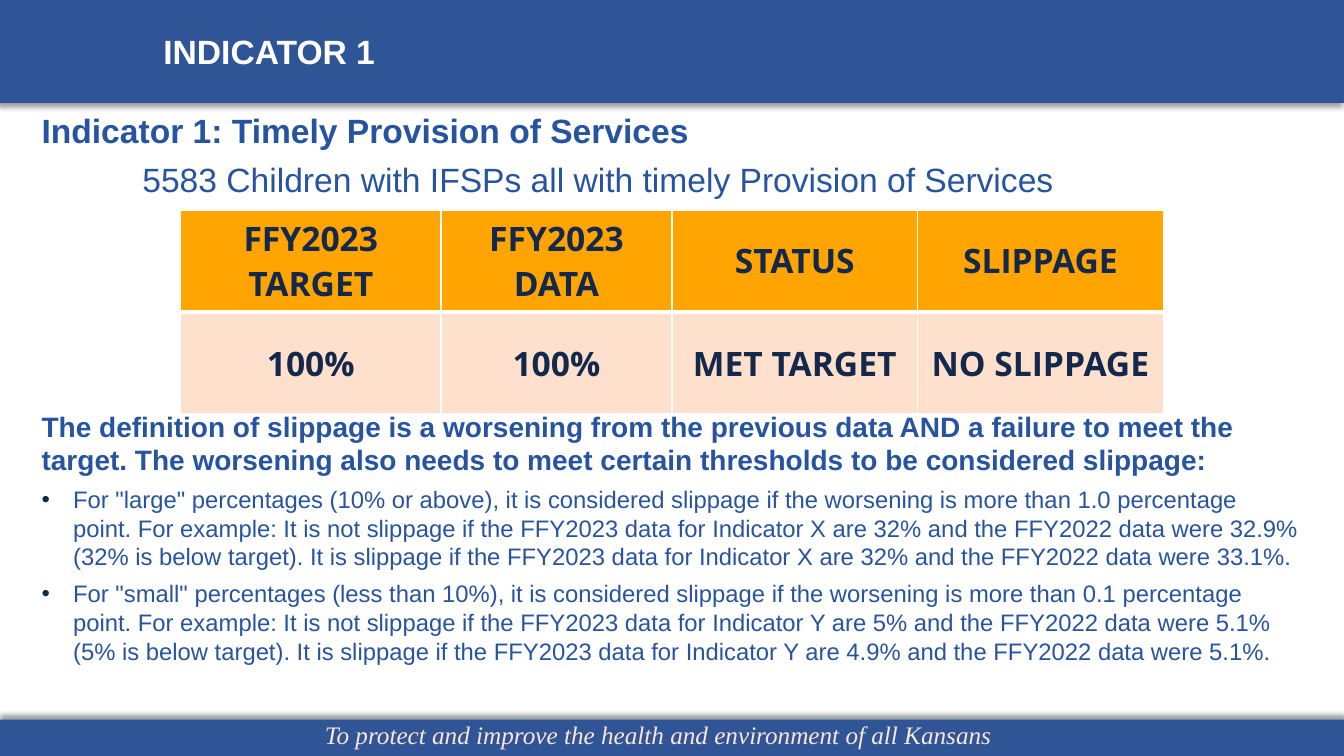
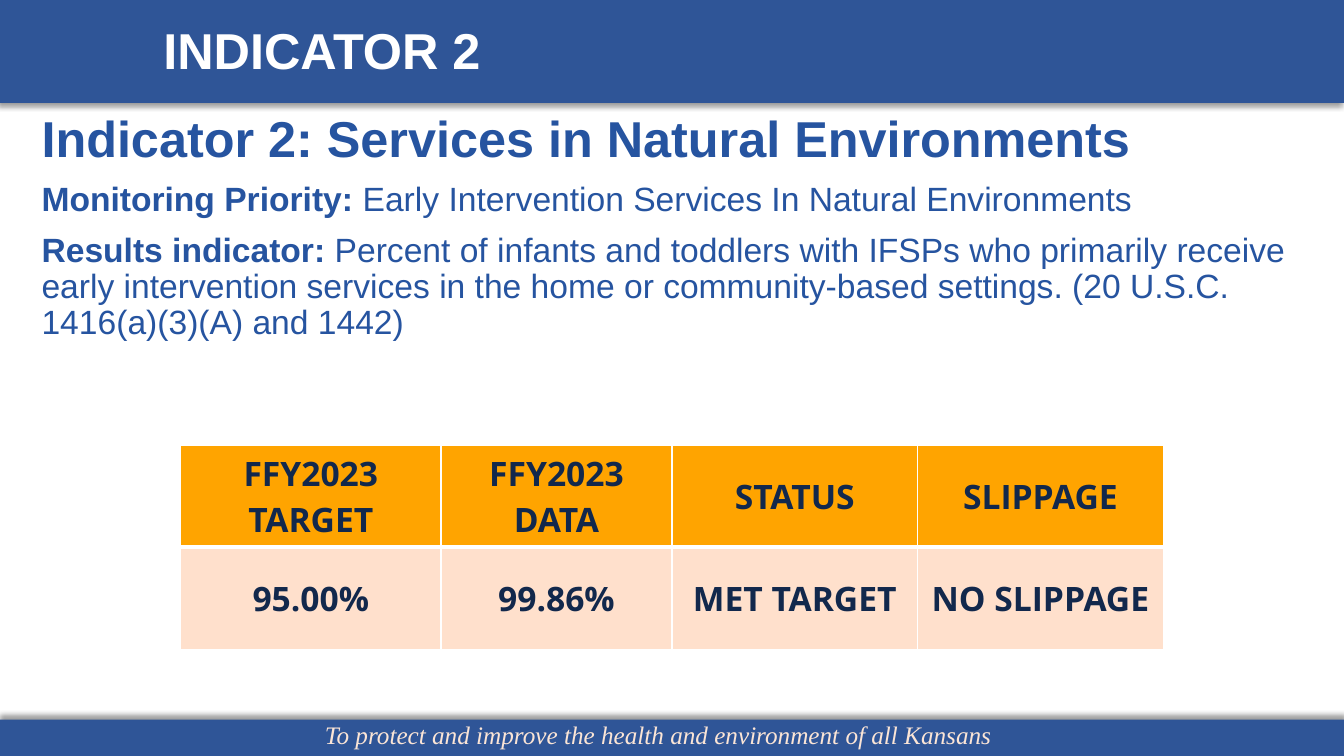
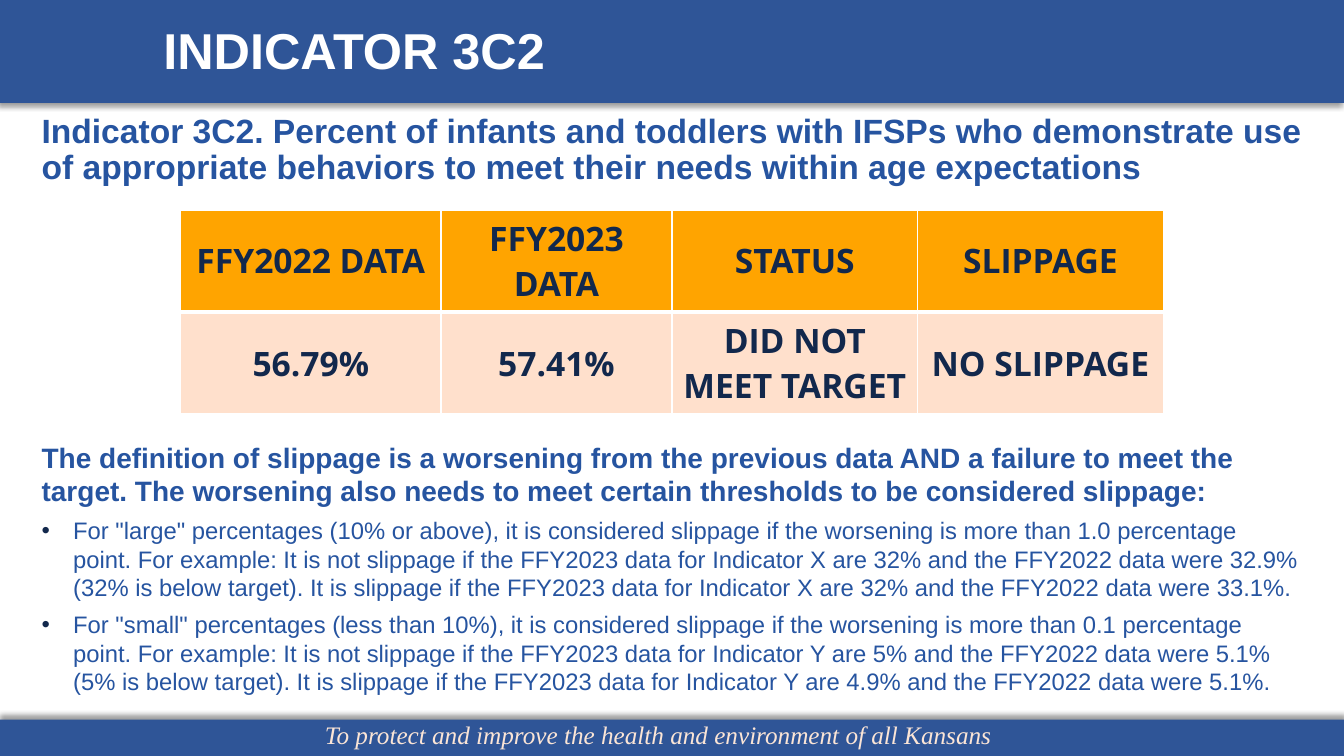
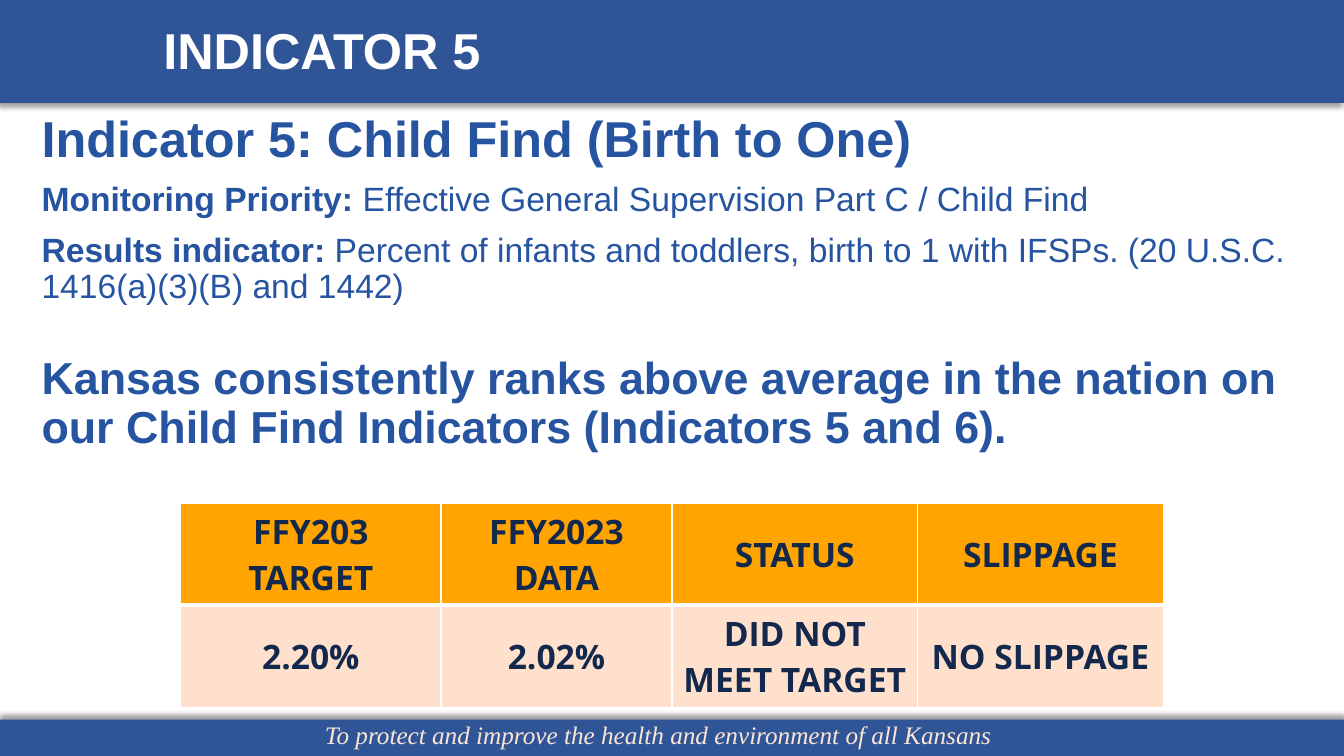
import dataclasses

import lxml.etree
import pptx
import pptx.dml.color
import pptx.enum.shapes
import pptx.enum.text
import pptx.oxml.ns
import pptx.util

Pt = pptx.util.Pt
qn = pptx.oxml.ns.qn


@dataclasses.dataclass(frozen=True)
class Theme:
    band: str = "2F5597"
    text: str = "2654A0"
    ink: str = "12284C"
    white: str = "FFFFFF"
    motto: str = "FBE5D6"
    header_fill: str = "FFA400"
    value_fill: str = "FFE0CC"
    font: str = "Arial"
    table_font: str = "Open Sans"
    motto_font: str = "Times New Roman"
    display: int = 36
    statement: int = 32
    standard: int = 24
    definition: int = 20
    detail: int = 17
    motto_size: int = 18


@dataclasses.dataclass(frozen=True)
class Box:
    left: float
    top: float
    width: float
    height: float

    def lengths(self):
        return [Pt(value) for value in (self.left, self.top, self.width, self.height)]


@dataclasses.dataclass(frozen=True)
class Para:
    spans: tuple
    size: int = 24
    before: float = 10
    line: float = 0.9
    indent: float = 0
    bullet: bool = False


THEME = Theme()
HEADER_BAND = Box(0, -0.5, 960, 74)
FOOTER_BAND = Box(0, 514, 960, 26.5)
MOTTO_BOX = Box(225, 510, 509, 29)
TITLE_BOX = Box(109.5, 16.5, 768, 43)
TALL_BODY = Box(22.5, 78, 915, 426)
SHORT_BODY = Box(22.5, 78, 915, 414)
COLUMNS = (186, 165, 175.5, 175.5)
ROWS = (60, 73)


def table_box(top):
    return Box(129, top, sum(COLUMNS), sum(ROWS))


def color(value):
    return pptx.dml.color.RGBColor.from_string(value)


def style(span, font, size, shade, bold=False, italic=False):
    span.font.name = font
    span.font.size = Pt(size)
    span.font.color.rgb = color(shade)
    span.font.bold = bold
    span.font.italic = italic


def sub(parent, tag, **attributes):
    return lxml.etree.SubElement(parent, qn(tag), attributes)


def add_band(page, box, direction):
    band = page.shapes.add_shape(pptx.enum.shapes.MSO_SHAPE.RECTANGLE, *box.lengths())
    band.fill.solid()
    band.fill.fore_color.rgb = color(THEME.band)
    band.line.fill.background()
    band.shadow.inherit = False
    effects = band.element.spPr.find(qn("a:effectLst"))
    shadow = sub(effects, "a:outerShdw", blurRad=str(Pt(4)), dist=str(Pt(3)),
                 dir=str(direction * 60000), rotWithShape="0")
    shade = sub(shadow, "a:srgbClr", val="000000")
    sub(shade, "a:alpha", val="40000")
    return band


def add_motto(page, box):
    motto = page.shapes.add_textbox(*box.lengths())
    frame = motto.text_frame
    frame.word_wrap = True
    frame.auto_size = pptx.enum.text.MSO_AUTO_SIZE.SHAPE_TO_FIT_TEXT
    frame.text = "To protect and improve the health and environment of all Kansans"
    style(frame.paragraphs[0].runs[0], THEME.motto_font, THEME.motto_size,
          THEME.motto, italic=True)
    return motto


def furnish_layout(layout, page):
    for holder in list(layout.placeholders):
        if holder.placeholder_format.idx >= 10:
            layout.shapes.element.remove(holder.element)
    parts = [add_band(page, HEADER_BAND, 135), add_band(page, FOOTER_BAND, 270),
             add_motto(page, MOTTO_BOX)]
    for position, part in enumerate(parts, 2):
        layout.shapes.element.insert(position, part.element)


def place(holder, box):
    holder.left, holder.top, holder.width, holder.height = box.lengths()
    frame = holder.text_frame
    frame.word_wrap = True
    frame.auto_size = pptx.enum.text.MSO_AUTO_SIZE.NONE
    return frame


def fill_title(page, box, text, size):
    frame = place(page.shapes.title, box)
    frame.vertical_anchor = pptx.enum.text.MSO_ANCHOR.MIDDLE
    frame.text = text
    para = frame.paragraphs[0]
    para.alignment = pptx.enum.text.PP_ALIGN.LEFT
    para.line_spacing = 0.9
    style(para.runs[0], THEME.font, size, THEME.white, bold=True)


def set_bullet(para, content):
    properties = para._p.get_or_add_pPr()
    hanging = 22.5 if content.bullet else 0
    properties.set("marL", str(Pt(content.indent + hanging)))
    properties.set("indent", str(Pt(-hanging)))
    if content.bullet:
        sub(sub(properties, "a:buClr"), "a:srgbClr", val=THEME.ink)
        sub(properties, "a:buFont", typeface=THEME.font)
        sub(properties, "a:buChar", char="•")
    else:
        sub(properties, "a:buNone")


def fill_body(page, box, contents):
    frame = place(page.placeholders[1], box)
    frame.vertical_anchor = pptx.enum.text.MSO_ANCHOR.TOP
    for index, content in enumerate(contents):
        para = frame.add_paragraph() if index else frame.paragraphs[0]
        set_bullet(para, content)
        para.space_before = Pt(content.before if index else 0)
        para.line_spacing = content.line
        for text, bold in content.spans:
            span = para.add_run()
            span.text = text
            style(span, THEME.font, content.size, THEME.text, bold=bold)


def set_borders(cell, widths):
    properties = cell._tc.get_or_add_tcPr()
    for position, (side, width) in enumerate(widths.items()):
        line = lxml.etree.Element(qn("a:ln" + side), w=str(Pt(width)))
        sub(sub(line, "a:solidFill"), "a:srgbClr", val=THEME.white)
        properties.insert(position, line)


def add_results(page, box, headings, values):
    table = page.shapes.add_table(len(ROWS), len(COLUMNS), *box.lengths()).table
    table.horz_banding = False
    for column, width in zip(table.columns, COLUMNS):
        column.width = Pt(width)
    looks = ((THEME.header_fill, {"L": 1, "R": 1, "T": 1, "B": 3}),
             (THEME.value_fill, {"L": 1, "R": 1, "T": 3, "B": 1}))
    for row, height, texts, (fill, widths) in zip(table.rows, ROWS, (headings, values), looks):
        row.height = Pt(height)
        for cell, text in zip(row.cells, texts):
            cell.fill.solid()
            cell.fill.fore_color.rgb = color(fill)
            set_borders(cell, widths)
            cell.vertical_anchor = pptx.enum.text.MSO_ANCHOR.MIDDLE
            cell.text_frame.text = text
            para = cell.text_frame.paragraphs[0]
            para.alignment = pptx.enum.text.PP_ALIGN.CENTER
            style(para.runs[0], THEME.table_font, THEME.standard, THEME.ink, bold=True)


def slippage_rule(kind, limit, threshold, letter, below, allowed, slipped, previous):
    text = (f'For "{kind}" percentages ({limit}), it is considered slippage if the worsening is '
            f"more than {threshold} percentage point. For example: It is not slippage if the "
            f"FFY2023 data for Indicator {letter} are {below} and the FFY2022 data were {allowed} "
            f"({below} is below target). It is slippage if the FFY2023 data for Indicator "
            f"{letter} are {slipped} and the FFY2022 data were {previous}.")
    return Para(((text, False),), THEME.detail, 6, 1.0, bullet=True)


def slippage_definition(gap):
    text = ("The definition of slippage is a worsening from the previous data AND a failure to "
            "meet the target. The worsening also needs to meet certain thresholds to be "
            "considered slippage:")
    return [
        Para(((text, True),), THEME.definition, gap, 1.0),
        slippage_rule("large", "10% or above", "1.0", "X", "32%", "32.9%", "32%", "33.1%"),
        slippage_rule("small", "less than 10%", "0.1", "Y", "5%", "5.1%", "4.9%", "5.1%"),
    ]


def indicator_summary(heading, priority, result):
    return [
        Para(((heading, True),), THEME.display),
        Para((("Monitoring Priority: ", True), (priority, False))),
        Para((("Results indicator: ", True), (result, False))),
    ]


def headings(first):
    return first, "FFY2023 DATA", "STATUS", "SLIPPAGE"


def build_pages():
    met = ("MET TARGET", "NO SLIPPAGE")
    missed = ("DID NOT MEET TARGET", "NO SLIPPAGE")
    return [
        ("INDICATOR 1", THEME.standard, TALL_BODY, [
            Para((("Indicator 1: Timely Provision of Services", True),)),
            Para((("5583 Children with IFSPs all with timely Provision of Services", False),),
                 before=6, line=1.0, indent=72),
            *slippage_definition(150),
        ], 150, headings("FFY2023 TARGET"), ("100%", "100%", *met)),
        ("INDICATOR 2", THEME.display, SHORT_BODY, indicator_summary(
            "Indicator 2: Services in Natural Environments",
            "Early Intervention Services In Natural Environments",
            "Percent of infants and toddlers with IFSPs who primarily receive early intervention "
            "services in the home or community-based settings. "
            "(20 U.S.C. 1416(a)(3)(A) and 1442)",
        ), 318, headings("FFY2023 TARGET"), ("95.00%", "99.86%", *met)),
        ("INDICATOR 3C2", THEME.display, TALL_BODY, [
            Para((("Indicator 3C2. Percent of infants and toddlers with IFSPs who demonstrate "
                   "use of appropriate behaviors to meet their needs within age expectations",
                   True),)),
            *slippage_definition(181),
        ], 150, headings("FFY2022 DATA"), ("56.79%", "57.41%", *missed)),
        ("INDICATOR 5", THEME.display, SHORT_BODY, [
            *indicator_summary(
                "Indicator 5: Child Find (Birth to One)",
                "Effective General Supervision Part C / Child Find",
                "Percent of infants and toddlers, birth to 1 with IFSPs. "
                "(20 U.S.C. 1416(a)(3)(B) and 1442)"),
            Para((("Kansas consistently ranks above average in the nation on our Child Find "
                   "Indicators (Indicators 5 and 6).", True),), THEME.statement, 36),
        ], 359.5, headings("FFY203 TARGET"), ("2.20%", "2.02%", *missed)),
    ]


def main():
    deck = pptx.Presentation()
    deck.slide_width, deck.slide_height = Pt(960), Pt(540)
    layout = deck.slide_layouts[1]
    for index, (title, size, body, contents, top, names, values) in enumerate(build_pages()):
        page = deck.slides.add_slide(layout)
        if index == 0:
            furnish_layout(layout, page)
        fill_title(page, TITLE_BOX, title, size)
        fill_body(page, body, contents)
        add_results(page, table_box(top), names, values)
    deck.save("out.pptx")


if __name__ == "__main__":
    main()
